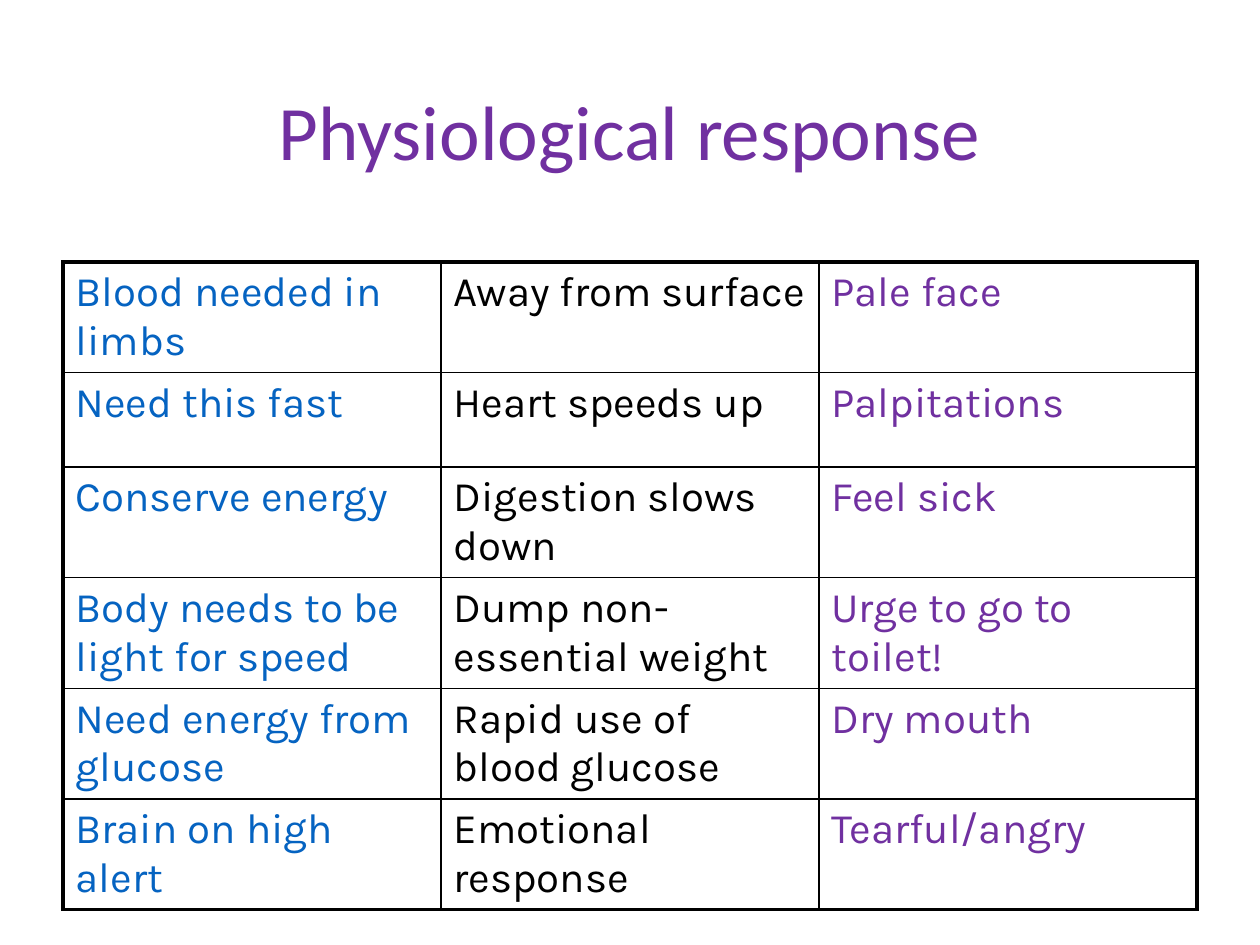
from lxml import etree
from pptx import Presentation
from pptx.dml.color import RGBColor
from pptx.enum.text import MSO_ANCHOR, PP_ALIGN
from pptx.oxml.ns import qn
from pptx.util import Inches, Pt

CENTER = PP_ALIGN.CENTER
LEFT = PP_ALIGN.LEFT
MIDDLE = MSO_ANCHOR.MIDDLE
TITLE_ONLY = 5

COLORS = {"purple": "7030A0", "blue": "0563C1", "black": "000000"}
COLUMN_COLORS = ["blue", "black", "purple"]
OUTER_LINE, INNER_LINE = 2.25, 1
ROW_HEIGHT = 0.75

RESPONSES = [
    ("Blood needed in limbs", "Away from surface", "Pale face"),
    ("Need this fast", "Heart speeds up", "Palpitations"),
    ("Conserve energy", "Digestion slows down", "Feel sick"),
    ("Body needs to be light for speed", "Dump non-essential weight",
     "Urge to go to toilet!"),
    ("Need energy from glucose", "Rapid use of blood glucose", "Dry mouth"),
    ("Brain on high alert", "Emotional response", "Tearful/angry"),
]


def write_text(text_frame, text, *, size, font, color, align=LEFT,
               line_spacing=None, space_before=None):
    """Write one paragraph; space_before is a percentage of the line."""
    paragraph = text_frame.paragraphs[0]
    paragraph.alignment = align
    if line_spacing:
        paragraph.line_spacing = line_spacing
    if space_before:
        properties = paragraph._p.get_or_add_pPr()
        spacing = etree.SubElement(properties, qn("a:spcBef"))
        etree.SubElement(spacing, qn("a:spcPct"), val=str(space_before * 1000))
    run = paragraph.add_run()
    run.text = text
    run.font.size = Pt(size)
    run.font.name = font
    run.font.color.rgb = RGBColor.from_string(COLORS[color])


def set_borders(cell, widths):
    """Draw black borders; widths are points for left, right, top, bottom."""
    properties = cell._tc.get_or_add_tcPr()
    for index, (side, width) in enumerate(zip("LRTB", widths)):
        line = etree.Element(qn(f"a:ln{side}"), w=str(Pt(width)))
        fill = etree.SubElement(line, qn("a:solidFill"))
        etree.SubElement(fill, qn("a:srgbClr"), val=COLORS["black"])
        properties.insert(index, line)


def add_title(slide, text):
    title = slide.shapes.title
    title.left, title.top = Inches(0.5), Inches(0.32)
    title.width, title.height = Inches(9), Inches(1.51)
    title.text_frame.vertical_anchor = MIDDLE
    write_text(title.text_frame, text, size=44, font="Calibri",
               color="purple", align=CENTER, line_spacing=0.9)


def add_response_table(slide, rows):
    row_count, column_count = len(rows), len(COLUMN_COLORS)
    table = slide.shapes.add_table(
        row_count, column_count, Inches(0.5), Inches(2.08),
        Inches(9), Inches(ROW_HEIGHT * row_count)).table
    table.first_row = False
    table.horz_banding = False
    for row, texts in enumerate(rows):
        for column, text in enumerate(texts):
            cell = table.cell(row, column)
            cell.fill.background()
            write_text(cell.text_frame, text, size=24, font="Karla",
                       color=COLUMN_COLORS[column], space_before=20)
            on_edge = (column == 0, column == column_count - 1,
                       row == 0, row == row_count - 1)
            set_borders(cell, [OUTER_LINE if edge else INNER_LINE
                               for edge in on_edge])


def main():
    presentation = Presentation()
    presentation.slide_width = Inches(10)
    presentation.slide_height = Inches(7.5)
    slide = presentation.slides.add_slide(
        presentation.slide_layouts[TITLE_ONLY])
    add_title(slide, "Physiological response")
    add_response_table(slide, RESPONSES)
    presentation.save("out.pptx")


if __name__ == "__main__":
    main()
